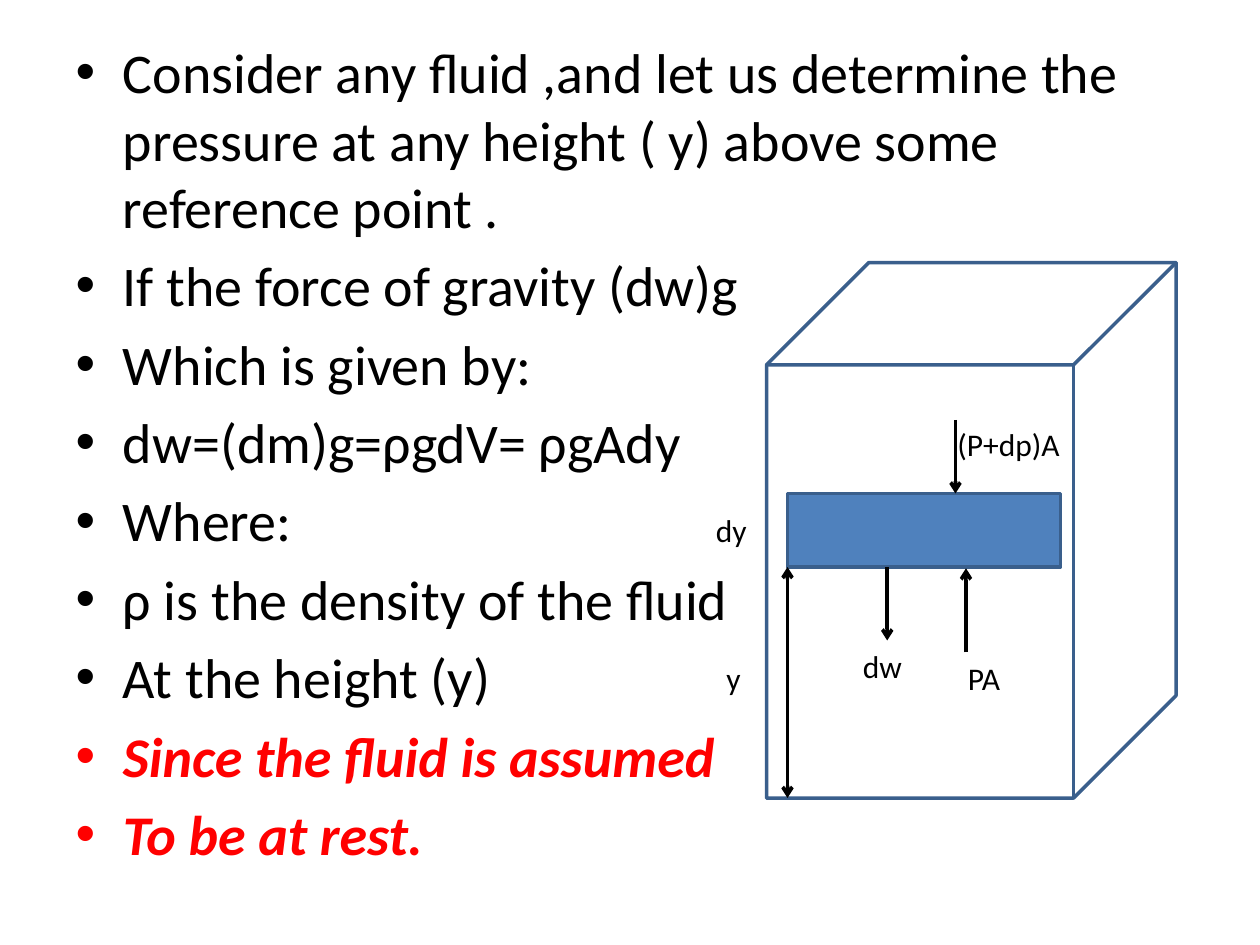
import pptx
import pptx.dml.color
import pptx.enum.shapes
import pptx.enum.text
import pptx.oxml
import pptx.oxml.ns
import pptx.util

PX = 9525  # EMU per px, 96 px to the inch
FONT = "Calibri"
BLACK, RED, BLUE, OUTLINE = "000000", "FF0000", "4F81BD", "3A5F8C"

STATEMENTS = [
    "Consider any fluid ,and let us determine the pressure at any height ( y) above some reference point .",
    "If the force of gravity (dw)g",
    "Which is given by:",
    "dw=(dm)g=ρgdV= ρgAdy",
    "Where:",
    "ρ is the density of the fluid",
    "At the height (y)",
]
CONCLUSION = ["Since the fluid is assumed", "To be at rest."]

LABELS = [  # text, left, top, width
    ("(P+dp)A", 720, 319, 112),
    ("PA", 728, 497, 56),
    ("dy", 536, 385, 56),
    ("y", 544, 497, 48),
    ("dw", 648, 488, 56),
]

SLAB = (600, 376, 208, 56)
TANK = (584, 200, 312, 408)
SLAB_TOP, SLAB_BOTTOM = SLAB[1], SLAB[1] + SLAB[3]
TANK_BOTTOM = TANK[1] + TANK[3]


def px(*lengths):
    return [pptx.util.Emu(length * PX) for length in lengths]


def colour(hex_string):
    return pptx.dml.color.RGBColor.from_string(hex_string)


def set_font(font, size, hex_string, strong=False):
    font.name = FONT
    font.size = pptx.util.Pt(size)
    font.color.rgb = colour(hex_string)
    if strong:
        font.bold = font.italic = True


def set_line(line, hex_string):
    line.color.rgb = colour(hex_string)
    line.width = pptx.util.Pt(2)


def fill_body(body):
    body.left, body.top, body.width, body.height = px(48, 24, 864, 656)
    frame = body.text_frame
    frame.auto_size = pptx.enum.text.MSO_AUTO_SIZE.NONE
    frame.text = "\n".join(STATEMENTS + CONCLUSION)
    for para in frame.paragraphs:
        concluding = para.text in CONCLUSION
        set_font(para.font, 32, RED if concluding else BLACK, concluding)
    frame.paragraphs[0].space_before = pptx.util.Pt(0)


def add_solid(page, kind, bounds, fill=None):
    solid = page.shapes.add_shape(kind, *px(*bounds))
    solid.shadow.inherit = False
    if fill:
        solid.fill.solid()
        solid.fill.fore_color.rgb = colour(fill)
    else:
        solid.fill.background()
    set_line(solid.line, OUTLINE)


def add_label(page, text, left, top, width):
    box = page.shapes.add_textbox(*px(left, top, width, 38))
    frame = box.text_frame
    frame.word_wrap = True
    frame.auto_size = pptx.enum.text.MSO_AUTO_SIZE.SHAPE_TO_FIT_TEXT
    frame.text = text
    set_font(frame.paragraphs[0].font, 18, BLACK)


def add_vertical_arrow(page, x, start, end, ends=("tailEnd",)):
    arrow = page.shapes.add_connector(
        pptx.enum.shapes.MSO_CONNECTOR.STRAIGHT, *px(x, start, x, end))
    set_line(arrow.line, BLACK)
    outline = arrow.line._get_or_add_ln()
    for tag in ends:
        head = pptx.oxml.parse_xml(
            f'<a:{tag} {pptx.oxml.ns.nsdecls("a")} type="arrow"/>')
        outline.append(head)
    arrow._element.spPr.append(pptx.oxml.parse_xml(
        f'<a:effectLst {pptx.oxml.ns.nsdecls("a")}/>'))


def main():
    deck = pptx.Presentation()
    deck.slide_width, deck.slide_height = px(960, 720)
    page = deck.slides.add_slide(deck.slide_layouts.get_by_name("Title and Content"))
    title = page.shapes.title._element
    title.getparent().remove(title)

    fill_body(page.placeholders[1])
    shapes = pptx.enum.shapes.MSO_SHAPE
    add_solid(page, shapes.RECTANGLE, SLAB, BLUE)
    add_solid(page, shapes.CUBE, TANK)
    for label in LABELS:
        add_label(page, *label)
    add_vertical_arrow(page, SLAB[0], SLAB_BOTTOM, TANK_BOTTOM, ("headEnd", "tailEnd"))
    add_vertical_arrow(page, 676, SLAB_BOTTOM, 488)
    add_vertical_arrow(page, 728, 320, SLAB_TOP)
    add_vertical_arrow(page, 736, 497, SLAB_BOTTOM + 1)
    deck.save("out.pptx")


if __name__ == "__main__":
    main()
